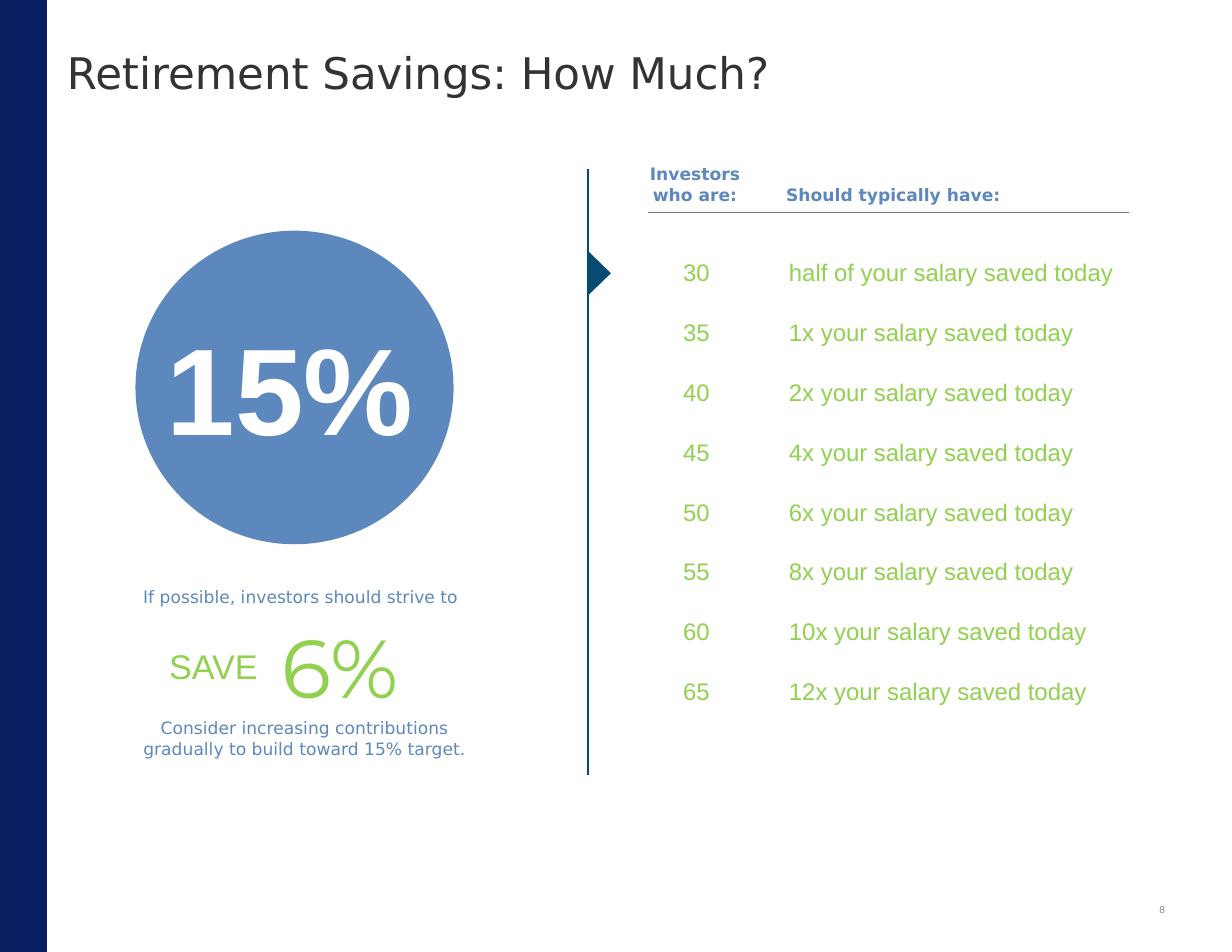
from lxml.etree import SubElement
from pptx import Presentation
from pptx.dml.color import RGBColor as RGB
from pptx.enum.shapes import MSO_CONNECTOR as Conn, MSO_SHAPE as Shape
from pptx.enum.text import MSO_ANCHOR as Anchor, PP_ALIGN as Align
from pptx.oxml.ns import qn
from pptx.util import Pt

hues = {
    "navy": "0A1F62",
    "blue": "5D88BD",
    "teal": "054C70",
    "green": "92D050",
    "ink": "323332",
    "gray": "838683",
    "rule": "767676",
    "white": "FFFFFF",
}
sans = "DejaVu Sans"

deck = Presentation()
deck.slide_width, deck.slide_height = Pt(792), Pt(612)
slide = deck.slides.add_slide(deck.slide_layouts[6])
shapes = slide.shapes


def write(text, spot, size, font, hue, bold=False, align=Align.LEFT, inset=0, tab=None):
    box = shapes.add_textbox(*map(Pt, spot))
    frame = box.text_frame
    frame.word_wrap = True
    frame.margin_left = frame.margin_right = Pt(inset)
    frame.margin_top = frame.margin_bottom = Pt(inset / 2)
    frame.text = text
    para = frame.paragraphs[0]
    para.alignment = align
    if tab:
        stops = SubElement(para._p.get_or_add_pPr(), qn("a:tabLst"))
        SubElement(stops, qn("a:tab"), pos=str(Pt(tab)), algn="l")
    for run in para.runs:
        run.font.size = Pt(size)
        run.font.name = font
        run.font.bold = bold
        run.font.color.rgb = RGB.from_string(hues[hue])
    return frame


for kind, spot, hue, turn in [
    (Shape.RECTANGLE, (0, 0, 30.2, 612), "navy", 0),
    (Shape.OVAL, (87.1, 148.3, 204.5, 201.6), "blue", 0),
    (Shape.ISOSCELES_TRIANGLE, (371.5, 168.5, 28, 14.4), "teal", 90),
]:
    form = shapes.add_shape(kind, *map(Pt, spot))
    form.shadow.inherit = False
    form.fill.solid()
    form.fill.fore_color.rgb = RGB.from_string(hues[hue])
    form.line.fill.background()
    form.rotation = turn

for ends, hue in [
    ((416.9, 136.8, 725.8, 136.8), "rule"),
    ((378, 108.7, 378, 498.2), "teal"),
]:
    line = shapes.add_connector(Conn.STRAIGHT, *map(Pt, ends))
    line.line.width = Pt(0.75)
    line.line.color.rgb = RGB.from_string(hues[hue])
    SubElement(line._element.spPr, qn("a:effectLst"))

title = write("Retirement Savings: How Much?", (36, 33.1, 720, 30.2), 28, sans, "ink", inset=7.2)
title.vertical_anchor = Anchor.MIDDLE
title.paragraphs[0].line_spacing = 0.9
page = write("8", (720, 571, 36, 27.4), 6.5, "Arial", "gray", align=Align.RIGHT, inset=7.2)
page.vertical_anchor = Anchor.MIDDLE

write("15%", (107.3, 200.9, 173.5, 95.8), 79.2, "Arial", "white", bold=True)
write("If possible, investors should strive to", (85.7, 377.3, 215.3, 40.3), 11, sans, "blue", align=Align.CENTER)
write("SAVE", (108.7, 414.7, 60, 26.6), 22, "Arial", "green")
rate = write("6%", (175, 396, 87.1, 64.8), 52.8, "Montserrat", "green", align=Align.CENTER)
rate.word_wrap = False
write("Consider increasing contributions gradually to build toward 15% target.",
      (85.7, 461.5, 220.3, 26.6), 11, sans, "blue", align=Align.CENTER)

write("Investors who are:", (416.9, 105.1, 59.8, 26.6), 11, sans, "blue", bold=True, align=Align.CENTER)
write("Should typically have:", (505.4, 118.8, 187.2, 13.7), 11, sans, "blue", bold=True)

goals = ["half of", "1x", "2x", "4x", "6x", "8x", "10x", "12x"]
for row, goal in enumerate(goals):
    text = f"{30 + 5 * row}\t{goal} your salary saved today"
    write(text, (439.2, 165.6 + 38.5 * row, 286.6, 18.7), 15.4, "Arial", "green", tab=68)

deck.save("out.pptx")
